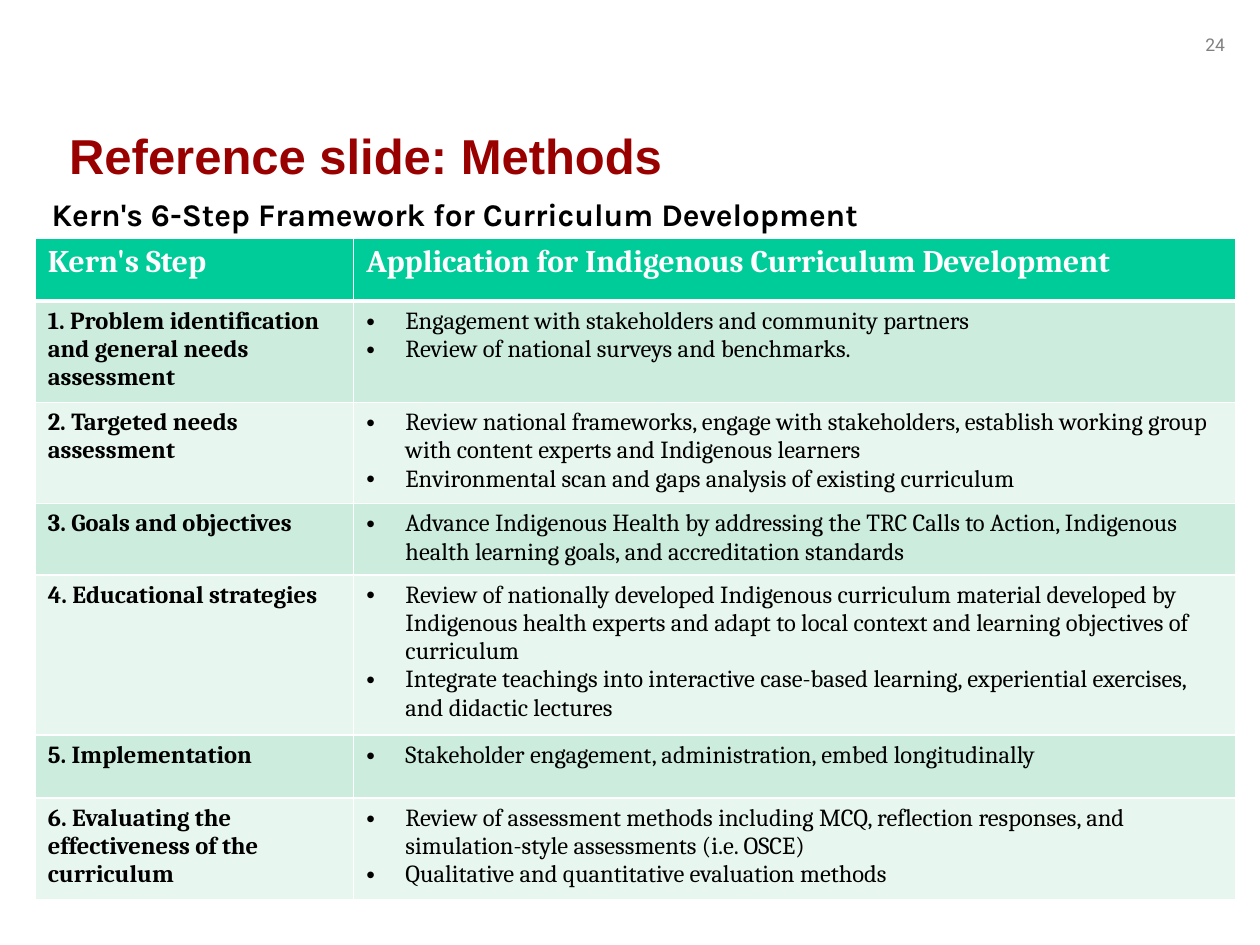
from pptx import Presentation, util as u
from pptx.dml.color import RGBColor
from pptx.enum import text
from pptx.oxml import parse_xml
from pptx.oxml.ns import nsdecls

# Content
TITLE = "Reference slide: Methods"
SUBTITLE = "Kern's 6-Step Framework for Curriculum Development"
PAGE_NUMBER = "24"
HEADER = ("Kern's Step", "Application for Indigenous Curriculum Development")
STEPS = [  # step, applications, row height in cm
    ("1. Problem identification and general needs assessment",
     ["Engagement with stakeholders and community partners",
      "Review of national surveys and benchmarks."], 2.04),
    ("2. Targeted needs assessment",
     ["Review national frameworks, engage with stakeholders, establish working group "
      "with content experts and Indigenous learners",
      "Environmental scan and gaps analysis of existing curriculum"], 2.04),
    ("3. Goals and objectives",
     ["Advance Indigenous Health by addressing the TRC Calls to Action, Indigenous "
      "health learning goals, and accreditation standards"], 1.43),
    ("4. Educational strategies",
     ["Review of nationally developed Indigenous curriculum material developed by "
      "Indigenous health experts and adapt to local context and learning objectives "
      "of curriculum",
      "Integrate teachings into interactive case-based learning, experiential "
      "exercises, and didactic lectures"], 3.23),
    ("5. Implementation",
     ["Stakeholder engagement, administration, embed longitudinally"], 1.27),
    ("6. Evaluating the effectiveness of the curriculum",
     ["Review of assessment methods including MCQ, reflection responses, and "
      "simulation-style assessments (i.e. OSCE)",
      "Qualitative and quantitative evaluation methods"], 2.04),
]

# Colours and formats
RED = RGBColor(0x99, 0x00, 0x00)
GREY = RGBColor(0x80, 0x80, 0x80)
BLACK = RGBColor(0x00, 0x00, 0x00)
WHITE = RGBColor(0xFF, 0xFF, 0xFF)
GREEN = RGBColor(0x00, 0xCC, 0x99)
BANDS = (RGBColor(0xCC, 0xEC, 0xDE), RGBColor(0xE7, 0xF6, 0xEF))

TITLE_FORMAT = dict(name="Arial", size=u.Pt(28), bold=True, color=RED)
SUBTITLE_FORMAT = dict(name="Karla", size=u.Pt(18), bold=True, color=BLACK)
NUMBER_FORMAT = dict(name="Roboto", size=u.Pt(10), bold=False, color=GREY)
HEADER_FORMAT = dict(name="Cambria", size=u.Pt(18), bold=True, color=WHITE)
STEP_FORMAT = dict(name="Cambria", size=u.Pt(14), bold=True, color=BLACK)
APPLICATION_FORMAT = dict(STEP_FORMAT, bold=False)

COLUMN_WIDTHS = (6.42, 17.78)
HEADER_HEIGHT = 1.27
INDENT = u.Cm(0.79)


def write(frame, lines, style, bullets=False):
    for index, line in enumerate(lines):
        paragraph = frame.paragraphs[0] if index == 0 else frame.add_paragraph()
        paragraph.alignment = text.PP_ALIGN.LEFT
        if bullets:
            properties = paragraph._p.get_or_add_pPr()
            properties.set("marL", str(INDENT))
            properties.set("indent", str(-INDENT))
            properties.append(parse_xml(f'<a:buFont {nsdecls("a")} typeface="Arial"/>'))
            properties.append(parse_xml(f'<a:buChar {nsdecls("a")} char="•"/>'))
        run = paragraph.add_run()
        run.text = line
        for name, value in style.items():
            if name == "color":
                run.font.color.rgb = value
            else:
                setattr(run.font, name, value)


def add_text(slide, box, line, style):
    frame = slide.shapes.add_textbox(*map(u.Cm, box)).text_frame
    frame.word_wrap = True
    write(frame, [line], style)


def fill_cell(cell, lines, style, colour, bottom=1, bullets=False):
    write(cell.text_frame, lines, style, bullets)
    cell.fill.solid()
    cell.fill.fore_color.rgb = colour
    properties = cell._tc.get_or_add_tcPr()
    for index, (side, width) in enumerate(zip("LRTB", (1, 1, 1, bottom))):
        properties.insert(index, parse_xml(
            f'<a:ln{side} {nsdecls("a")} w="{u.Pt(width)}"><a:solidFill>'
            f'<a:srgbClr val="{WHITE}"/></a:solidFill></a:ln{side}>'))


def main():
    presentation = Presentation()
    presentation.slide_width, presentation.slide_height = u.Cm(25.4), u.Cm(19.05)
    slide = presentation.slides.add_slide(presentation.slide_layouts[5])

    # Page number, title and subtitle
    add_text(slide, (24.05, 0.56, 1.19, 0.69), PAGE_NUMBER, NUMBER_FORMAT)
    title = slide.shapes.title
    title.left, title.top, title.width, title.height = map(u.Cm, (1.14, 1.93, 21.59, 2.39))
    title.text_frame.auto_size = text.MSO_AUTO_SIZE.NONE
    title.text_frame.vertical_anchor = text.MSO_ANCHOR.MIDDLE
    write(title.text_frame, [TITLE], TITLE_FORMAT)
    add_text(slide, (0.79, 3.81, 19.18, 1.02), SUBTITLE, SUBTITLE_FORMAT)

    # Table grid
    heights = [HEADER_HEIGHT] + [height for _, _, height in STEPS]
    table = slide.shapes.add_table(
        len(heights), len(COLUMN_WIDTHS), u.Cm(0.71), u.Cm(4.8),
        u.Cm(sum(COLUMN_WIDTHS)), u.Cm(sum(heights))).table
    for column, width in zip(table.columns, COLUMN_WIDTHS):
        column.width = u.Cm(width)
    for row, height in zip(table.rows, heights):
        row.height = u.Cm(height)

    # Table text
    for column, heading in enumerate(HEADER):
        fill_cell(table.cell(0, column), [heading], HEADER_FORMAT, GREEN, bottom=3)
    for row, (step, applications, _) in enumerate(STEPS, start=1):
        band = BANDS[(row - 1) % 2]
        fill_cell(table.cell(row, 0), [step], STEP_FORMAT, band)
        fill_cell(table.cell(row, 1), applications, APPLICATION_FORMAT, band, bullets=True)

    presentation.save("out.pptx")


if __name__ == "__main__":
    main()
